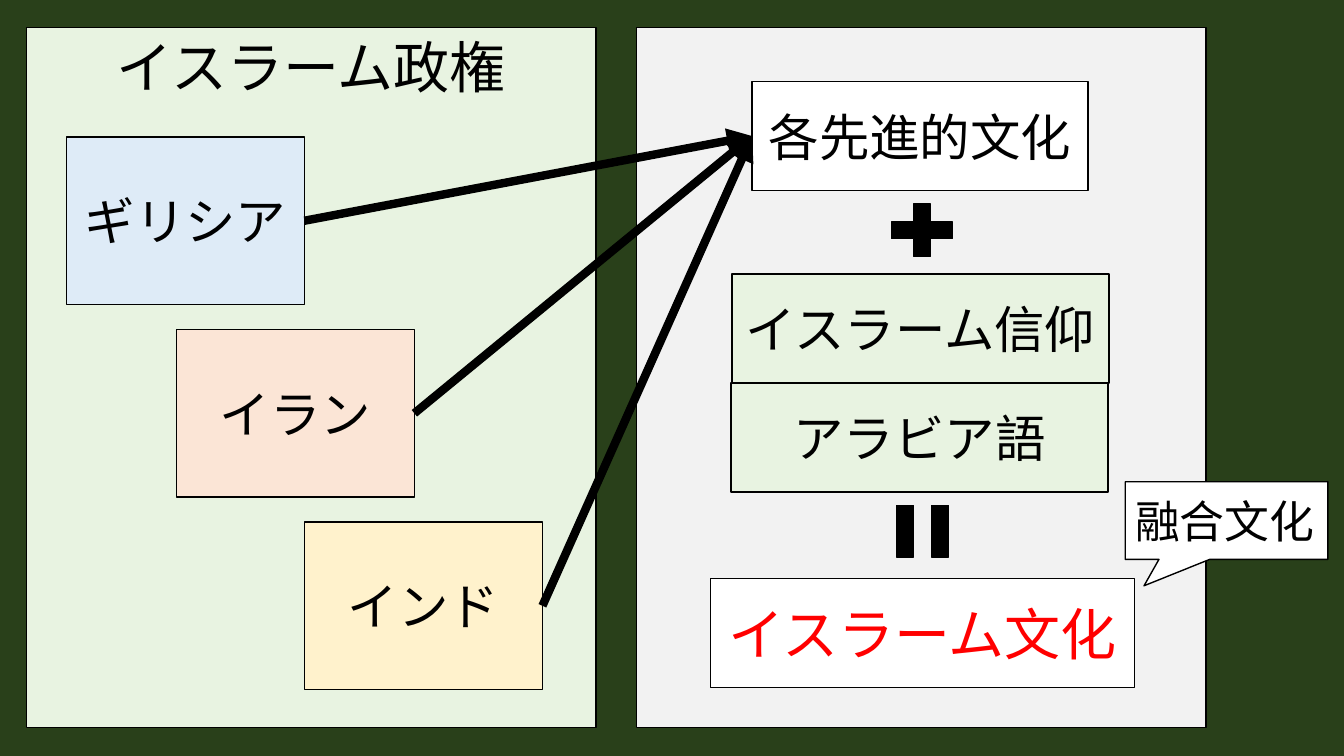
from lxml import etree
from pptx import Presentation
from pptx.dml.color import RGBColor
from pptx.enum.shapes import MSO_CONNECTOR, MSO_SHAPE
from pptx.enum.text import MSO_ANCHOR, PP_ALIGN
from pptx.oxml.ns import qn
from pptx.util import Inches, Pt

RECT = MSO_SHAPE.RECTANGLE
PLUS = MSO_SHAPE.MATH_PLUS
EQUAL = MSO_SHAPE.MATH_EQUAL
CALLOUT = MSO_SHAPE.RECTANGULAR_CALLOUT
STRAIGHT = MSO_CONNECTOR.STRAIGHT
TOP, MIDDLE = MSO_ANCHOR.TOP, MSO_ANCHOR.MIDDLE
LEFT, CENTER = PP_ALIGN.LEFT, PP_ALIGN.CENTER
LEFT_SITE, RIGHT_SITE = 1, 3

THEME = {
    "font": "Lato",
    "background": "29401A",
    "green": "E8F3E1",
    "blue": "DEEBF7",
    "orange": "FBE5D6",
    "yellow": "FFF2CC",
    "gray": "F2F2F2",
    "white": "FFFFFF",
    "black": "000000",
    "red": "FF0000",
    "title": 40,
    "body": 36,
    "note": 32,
    "outline": 1,
    "arrow": 6,
}

REALM = "イスラーム政権"
REGIONS = [("ギリシア", "blue", 0.66), ("イラン", "orange", 1.75), ("インド", "yellow", 3.02)]
ADVANCED = "各先進的文化"
ISLAMIC_BASE = [("イスラーム信仰", 7.26), ("アラビア語", 7.25)]
RESULT = "イスラーム文化"
FUSION_NOTE = "融合文化"

PANEL_TOP, PANEL_W, PANEL_H = 0.27, 5.65, 6.95
REALM_LEFT, FUSION_LEFT = 0.26, 6.31
REGION_TOP, REGION_STEP, REGION_W, REGION_H = 1.36, 1.91, 2.36, 1.66
BASE_TOP, BASE_W, CARD_H = 2.72, 3.74, 1.08


def color(key):
    return RGBColor.from_string(THEME[key])


def add_block(slide, box, fill, text="", size="body", ink="black",
              kind=RECT, anchor=MIDDLE, align=CENTER):
    block = slide.shapes.add_shape(kind, *(Inches(v) for v in box))
    block.shadow.inherit = False
    block.fill.solid()
    block.fill.fore_color.rgb = color(fill)
    block.line.color.rgb = color("black")
    block.line.width = Pt(THEME["outline"])
    if text:
        frame = block.text_frame
        frame.text = text
        frame.word_wrap = True
        frame.vertical_anchor = anchor
        paragraph = frame.paragraphs[0]
        paragraph.alignment = align
        font = paragraph.runs[0].font
        font.name = THEME["font"]
        font.size = Pt(THEME[size])
        font.color.rgb = color(ink)
    return block


def add_arrow(slide, source, target):
    arrow = slide.shapes.add_connector(STRAIGHT, 0, 0, 0, 0)
    arrow.begin_connect(source, RIGHT_SITE)
    arrow.end_connect(target, LEFT_SITE)
    arrow.line.color.rgb = color("black")
    arrow.line.width = Pt(THEME["arrow"])
    etree.SubElement(arrow.line._get_or_add_ln(), qn("a:tailEnd"), type="triangle")
    etree.SubElement(arrow._element.spPr, qn("a:effectLst"))


def main():
    prs = Presentation()
    prs.slide_width, prs.slide_height = Inches(13.33), Inches(7.5)
    slide = prs.slides.add_slide(prs.slide_layouts[6])
    slide.background.fill.solid()
    slide.background.fill.fore_color.rgb = color("background")

    add_block(slide, (REALM_LEFT, PANEL_TOP, PANEL_W, PANEL_H), "green",
              REALM, "title", anchor=TOP)
    regions = [
        add_block(slide, (left, REGION_TOP + i * REGION_STEP, REGION_W, REGION_H), fill, name)
        for i, (name, fill, left) in enumerate(REGIONS)
    ]

    add_block(slide, (FUSION_LEFT, PANEL_TOP, PANEL_W, PANEL_H), "gray")
    advanced = add_block(slide, (7.46, 0.81, 3.33, CARD_H), "white", ADVANCED)
    for region in regions:
        add_arrow(slide, region, advanced)

    add_block(slide, (8.73, 1.93, 0.83, 0.71), "black", kind=PLUS)
    for i, (name, left) in enumerate(ISLAMIC_BASE):
        add_block(slide, (left, BASE_TOP + i * CARD_H, BASE_W, CARD_H), "green", name)

    equal = add_block(slide, (8.8, 4.91, 0.7, 0.72), "black", kind=EQUAL)
    equal.rotation = 90
    equal.adjustments[0], equal.adjustments[1] = 0.235, 0.247

    add_block(slide, (7.05, 5.74, 4.2, CARD_H), "white", RESULT, "title", "red")
    note = add_block(slide, (11.16, 4.78, 2.01, 0.77), "white", FUSION_NOTE, "note",
                     kind=CALLOUT, align=LEFT)
    note.adjustments[0], note.adjustments[1] = -0.407, 0.84

    prs.save("out.pptx")


if __name__ == "__main__":
    main()
